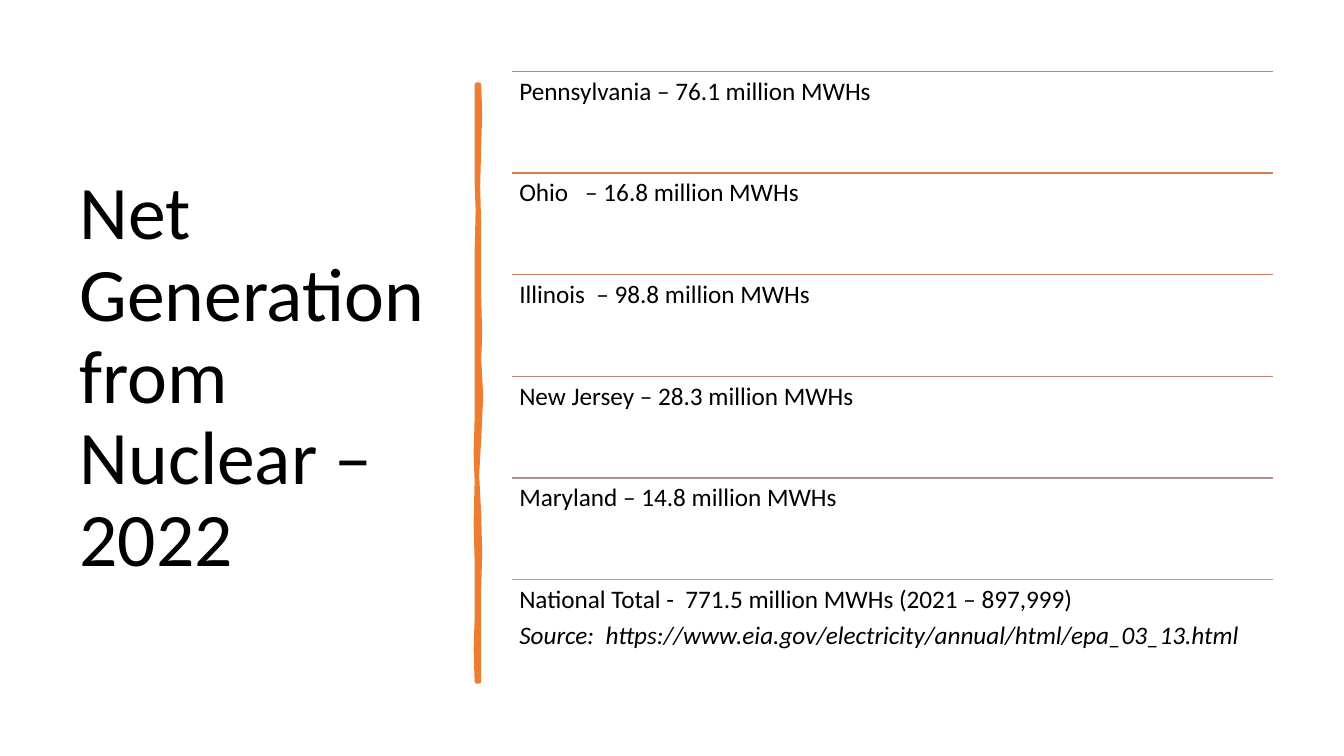
from dataclasses import dataclass

from lxml import etree
from pptx import Presentation
from pptx.dml.color import RGBColor
from pptx.enum import shapes, text
from pptx.oxml import ns
from pptx.util import Inches, Pt

TITLE = "Net Generation from Nuclear – 2022"
# Rule colour and the paragraphs below that rule
ROWS = [
    ("ED7D31", ["Pennsylvania – 76.1 million MWHs"]),
    ("DC7A4B", ["Ohio   – 16.8 million MWHs"]),
    ("CC7D64", ["Illinois  – 98.8 million MWHs"]),
    ("BD867B", ["New Jersey – 28.3 million MWHs"]),
    ("B09391", ["Maryland – 14.8 million MWHs"]),
    ("A5A5A5", ["National Total -  771.5 million MWHs (2021 – 897,999)",
                "Source:  https://www.eia.gov/electricity/annual/html/epa_03_13.html"]),
]
# Corners of the hand-drawn bar, down its right edge and up its left edge
BAR_OUTLINE = [
    (4.75, 0.84), (4.76, 1.11), (4.75, 1.46), (4.74, 1.84), (4.75, 2.26),
    (4.75, 2.94), (4.76, 3.33), (4.75, 3.56), (4.77, 3.93), (4.75, 4.36),
    (4.73, 4.71), (4.75, 5.1), (4.76, 5.49), (4.75, 5.84), (4.75, 6.76),
    (4.73, 6.76), (4.72, 6.45), (4.73, 6.13), (4.73, 5.57), (4.72, 5.18),
    (4.73, 4.77), (4.72, 4.5), (4.73, 4.15), (4.73, 3.35), (4.73, 2.5),
    (4.74, 2.09), (4.73, 1.81), (4.73, 1.33), (4.73, 0.84),
]
ROW_LEFT, ROW_WIDTH = 5.08, 7.55
FIRST_TOP, LAST_TOP = 0.71, 5.75
ROW_HEIGHT = (LAST_TOP - FIRST_TOP) / (len(ROWS) - 1)


@dataclass(frozen=True)
class Theme:
    font: str = "Calibri"
    ink: str = "000000"
    accent: str = "ED7D31"
    title_size: float = 54
    body_size: float = 18
    space_after: float = 6.3
    line_spacing: float = 0.9
    rule_width: float = 1
    bar_width: float = 3.25


THEME = Theme()


def style_paragraph(para, size, italic=False):
    para.alignment = text.PP_ALIGN.LEFT
    para.line_spacing = THEME.line_spacing
    for span in para.runs:
        span.font.name = THEME.font
        span.font.size = Pt(size)
        span.font.italic = italic
        span.font.color.rgb = RGBColor.from_string(THEME.ink)


def add_title(page):
    title = page.shapes.title
    title.left, title.top = Inches(0.69), Inches(0.7)
    title.width, title.height = Inches(3.74), Inches(6.11)
    frame = title.text_frame
    frame.text = TITLE
    frame.word_wrap = True
    frame.auto_size = text.MSO_AUTO_SIZE.NONE
    frame.vertical_anchor = text.MSO_ANCHOR.MIDDLE
    style_paragraph(frame.paragraphs[0], THEME.title_size)


def add_bar(page):
    start, *corners = [(Inches(x), Inches(y)) for x, y in BAR_OUTLINE]
    builder = page.shapes.build_freeform(*start)
    builder.add_line_segments(corners, close=True)
    bar = builder.convert_to_shape()
    bar.shadow.inherit = False
    bar.fill.solid()
    bar.fill.fore_color.rgb = RGBColor.from_string(THEME.accent)
    bar.line.color.rgb = RGBColor.from_string(THEME.accent)
    bar.line.width = Pt(THEME.bar_width)
    etree.SubElement(bar.line._get_or_add_ln(), ns.qn("a:round"))


def add_row(group, top, colour, lines):
    left, width = Inches(ROW_LEFT), Inches(ROW_WIDTH)
    rule = group.shapes.add_connector(
        shapes.MSO_CONNECTOR.STRAIGHT, left, top, left + width, top)
    rule.line.color.rgb = RGBColor.from_string(colour)
    rule.line.width = Pt(THEME.rule_width)
    etree.SubElement(rule._element.spPr, ns.qn("a:effectLst"))

    box = group.shapes.add_textbox(left, top, width, Inches(ROW_HEIGHT))
    frame = box.text_frame
    frame.word_wrap = True
    frame.margin_left = frame.margin_right = Inches(0.07)
    frame.margin_top = frame.margin_bottom = Inches(0.07)
    frame.text = "\n".join(lines)
    for number, para in enumerate(frame.paragraphs):
        style_paragraph(para, THEME.body_size, italic=number > 0)
        para.space_after = Pt(THEME.space_after)


def main():
    deck = Presentation()
    deck.slide_width, deck.slide_height = Inches(13.33), Inches(7.5)
    page = deck.slides.add_slide(deck.slide_layouts.get_by_name("Title Only"))
    add_title(page)
    add_bar(page)
    group = page.shapes.add_group_shape()
    for index, (colour, lines) in enumerate(ROWS):
        add_row(group, Inches(FIRST_TOP + index * ROW_HEIGHT), colour, lines)
    deck.save("out.pptx")


if __name__ == "__main__":
    main()
